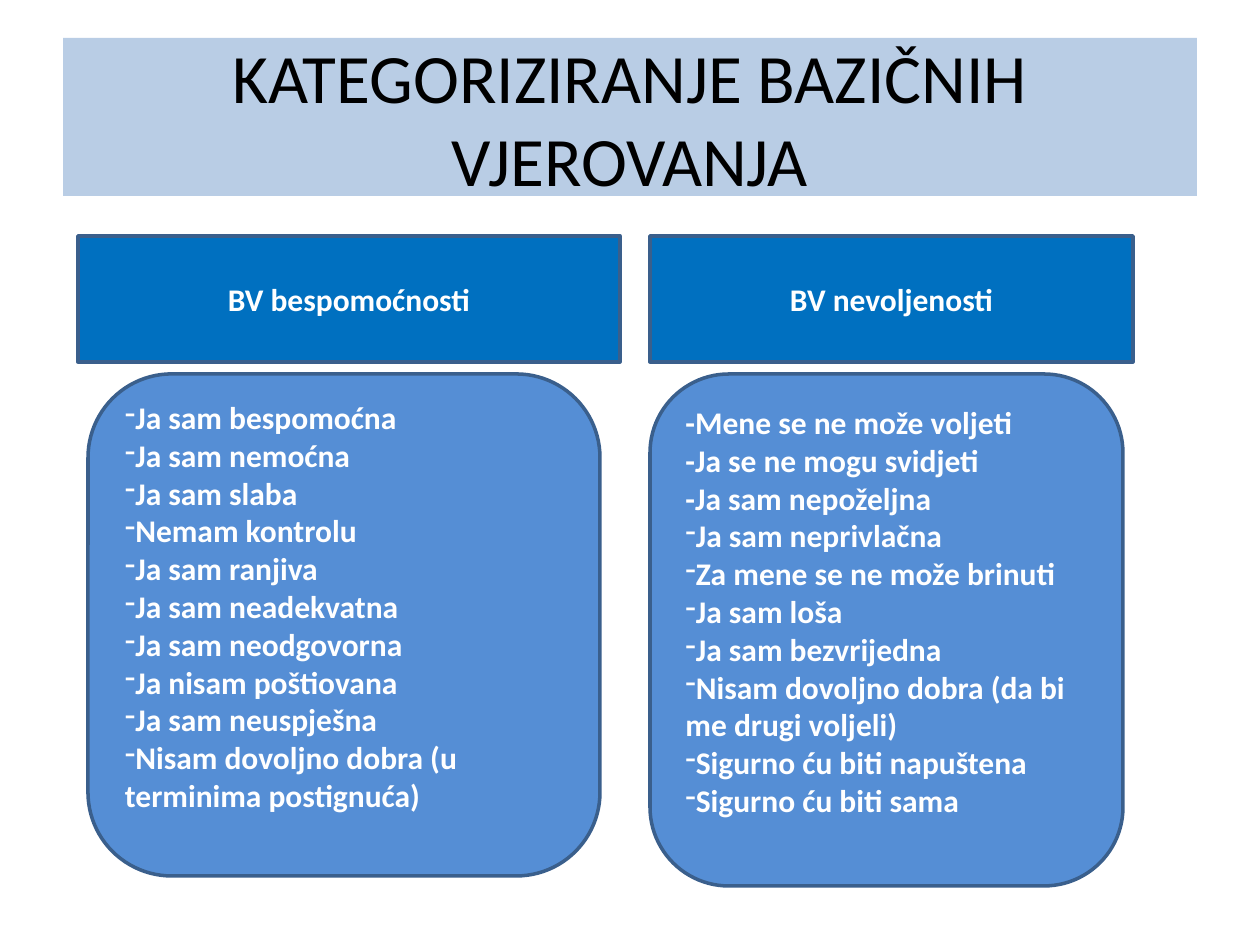
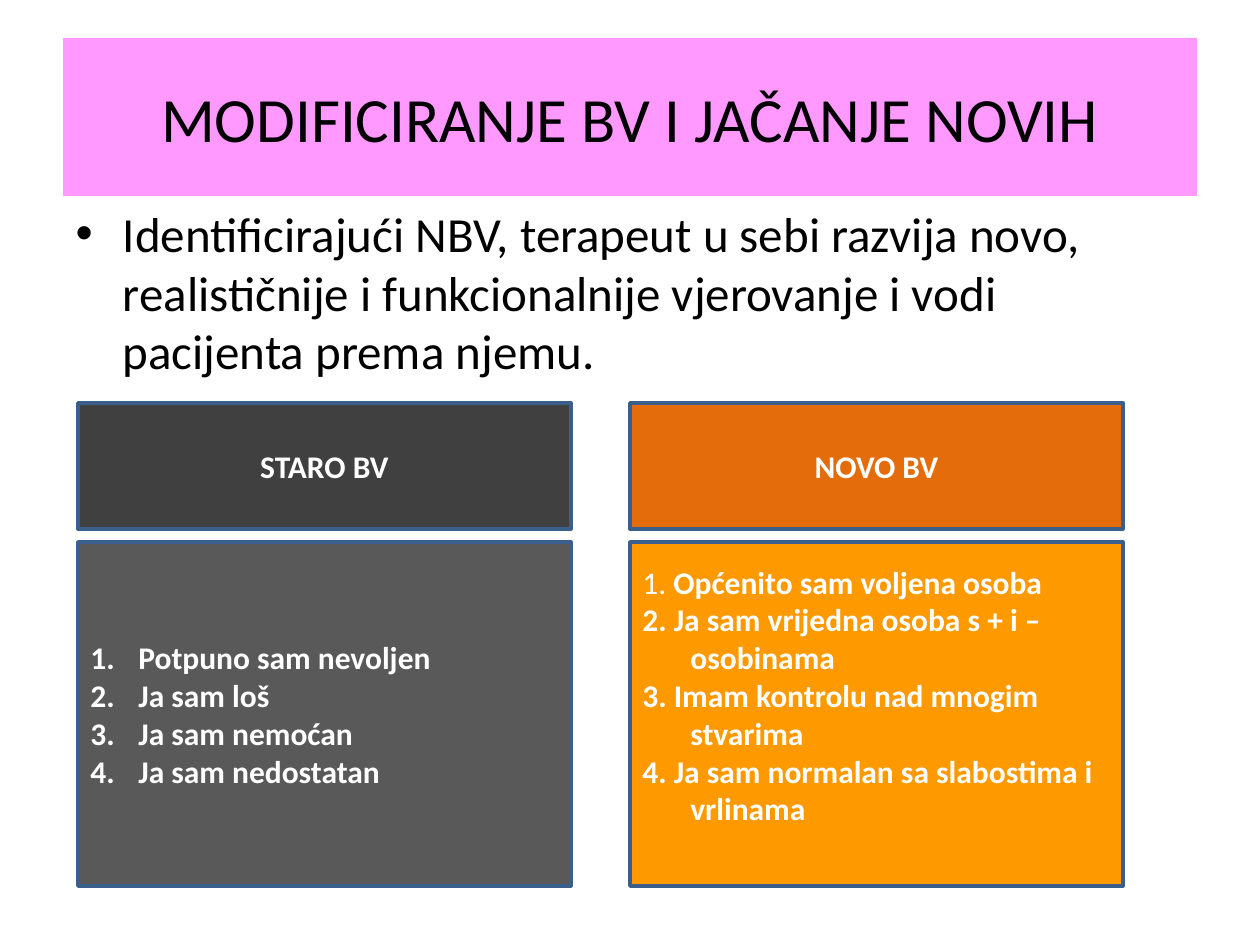
from dataclasses import dataclass
from typing import Any, NamedTuple, Optional

from lxml import etree
from pptx import Presentation
from pptx import util as u
from pptx.dml import color
from pptx.enum import shapes, text
from pptx.oxml import ns

PX_PER_INCH = 126
SLIDE_W, SLIDE_H = 1260, 945
HANGING = 48
EMPTY_LINE = 38
TITLE_ONLY, TITLE_AND_BODY = 5, 1


def px(length: int) -> u.Emu:
    return u.Emu(round(length * u.Inches(1) / PX_PER_INCH))


@dataclass(frozen=True)
class Theme:
    font: str = "Calibri"
    ink: str = "000000"
    light: str = "FFFFFF"
    outline: str = "3A5F8C"
    outline_pt: int = 2
    band_blue: str = "B9CDE5"
    band_pink: str = "FF99FF"
    heading_blue: str = "0070C0"
    card_blue: str = "558ED5"
    heading_old: str = "404040"
    card_old: str = "595959"
    heading_new: str = "E46C0A"
    card_new: str = "FF9900"
    long_title_pt: float = 39.6
    title_pt: int = 36
    body_pt: int = 28
    card_pt: int = 18


THEME = Theme()


class Box(NamedTuple):
    left: int
    top: int
    width: int
    height: int


class Belief(NamedTuple):
    """One list line; lead is typed before it in regular weight."""
    words: str
    mark: Optional[str] = None
    lead: str = ""


@dataclass(frozen=True)
class Panel:
    box: Box
    fill: str
    beliefs: tuple[Belief, ...]
    outline_shape: Any = shapes.MSO_SHAPE.RECTANGLE
    align: Any = text.PP_ALIGN.LEFT
    hanging: int = 0
    space_below: int = 0


TITLE_BOX = Box(63, 38, 1134, 158)
BODY_BOX = Box(63, 197, 1134, 699)


def apply(target: Any, values: dict[str, Any]) -> None:
    for attribute, value in values.items():
        setattr(target, attribute, value)


def place(target: Any, box: Box) -> None:
    apply(target, {side: px(length) for side, length in box._asdict().items()})


def paint(fill: Any, rgb: str) -> None:
    fill.solid()
    fill.fore_color.rgb = color.RGBColor.from_string(rgb)


def style(font: Any, size: float, rgb: str, bold: bool = False) -> None:
    apply(font, {"name": THEME.font, "size": u.Pt(size), "bold": bold})
    font.color.rgb = color.RGBColor.from_string(rgb)


def set_mark(paragraph: Any, mark: Optional[str], hanging: int) -> None:
    """Gives a paragraph its indent and a dash or automatic number."""
    properties = paragraph._p.get_or_add_pPr()
    if hanging:
        properties.set("marL", str(px(hanging)))
        properties.set("indent", str(-px(hanging)))
    if mark == "1.":
        etree.SubElement(properties, ns.qn("a:buAutoNum"), type="arabicPeriod")
    elif mark:
        etree.SubElement(properties, ns.qn("a:buFontTx"))
        etree.SubElement(properties, ns.qn("a:buChar"), char=mark)


def fill_placeholder(holder: Any, box: Box, words: str, size: float) -> None:
    place(holder, box)
    frame = holder.text_frame
    frame.text = words
    apply(frame, {"auto_size": text.MSO_AUTO_SIZE.NONE, "word_wrap": True})
    style(frame.paragraphs[0].runs[0].font, size, THEME.ink)


def add_title(slide: Any, words: str, band: str, size: float) -> None:
    fill_placeholder(slide.shapes.title, TITLE_BOX, words, size)
    paint(slide.shapes.title.fill, band)


def add_panel(slide: Any, panel: Panel) -> None:
    shape = slide.shapes.add_shape(panel.outline_shape, *map(px, panel.box))
    shape.shadow.inherit = False
    paint(shape.fill, panel.fill)
    paint(shape.line.fill, THEME.outline)
    shape.line.width = u.Pt(THEME.outline_pt)
    frame = shape.text_frame
    apply(frame, {
        "word_wrap": True,
        "vertical_anchor": text.MSO_ANCHOR.MIDDLE,
        "margin_bottom": frame.margin_bottom + px(panel.space_below),
    })
    for index, belief in enumerate(panel.beliefs):
        paragraph = frame.add_paragraph() if index else frame.paragraphs[0]
        paragraph.alignment = panel.align
        set_mark(paragraph, belief.mark, panel.hanging)
        for words, bold in ((belief.lead, False), (belief.words, True)):
            if words:
                run = paragraph.add_run()
                run.text = words
                style(run.font, THEME.card_pt, THEME.light, bold)


def heading(box: Box, fill: str, words: str) -> Panel:
    return Panel(box, fill, (Belief(words),), align=text.PP_ALIGN.CENTER)


def rounded_card(box: Box, beliefs: tuple[Belief, ...]) -> Panel:
    return Panel(box, THEME.card_blue, beliefs,
                 shapes.MSO_SHAPE.ROUNDED_RECTANGLE, space_below=EMPTY_LINE)


def marked(mark: str, *lines: str) -> tuple[Belief, ...]:
    return tuple(Belief(line, mark) for line in lines)


HELPLESS = marked(
    "-", "Ja sam bespomoćna", "Ja sam nemoćna", "Ja sam slaba",
    "Nemam kontrolu", "Ja sam ranjiva", "Ja sam neadekvatna",
    "Ja sam neodgovorna", "Ja nisam poštiovana", "Ja sam neuspješna",
    "Nisam dovoljno dobra (u terminima postignuća)",
)
UNLOVED = (
    Belief("-Mene se ne može voljeti"),
    Belief("-Ja se ne mogu svidjeti"),
    Belief("-Ja sam nepoželjna"),
    *marked(
        "-", "Ja sam neprivlačna", "Za mene se ne može brinuti",
        "Ja sam loša", "Ja sam bezvrijedna",
        "Nisam dovoljno dobra (da bi me drugi voljeli)",
        "Sigurno ću biti napuštena", "Sigurno ću biti sama",
    ),
)
OLD_BELIEFS = marked("1.", "Potpuno sam nevoljen", "Ja sam loš",
                     "Ja sam nemoćan", "Ja sam nedostatan")
NEW_BELIEFS = (
    Belief("Općenito sam voljena osoba", lead="1. "),
    Belief("2. Ja sam vrijedna osoba s + i – osobinama"),
    Belief("3. Imam kontrolu nad mnogim stvarima"),
    Belief("4. Ja sam normalan sa slabostima i vrlinama"),
)

CATEGORY_PANELS = (
    heading(Box(78, 236, 542, 126), THEME.heading_blue, "BV bespomoćnosti"),
    heading(Box(650, 236, 483, 126), THEME.heading_blue, "BV nevoljenosti"),
    rounded_card(Box(88, 374, 512, 502), HELPLESS),
    rounded_card(Box(650, 374, 473, 512), UNLOVED),
)


def change_panels() -> list[Panel]:
    """Old and new beliefs as two equal columns of heading and card."""
    columns = (
        (78, "STARO BV", THEME.heading_old, THEME.card_old, OLD_BELIEFS, 0),
        (630, "NOVO BV", THEME.heading_new, THEME.card_new, NEW_BELIEFS,
         EMPTY_LINE),
    )
    panels = []
    for left, label, heading_fill, card_fill, beliefs, space_below in columns:
        panels.append(heading(Box(left, 403, 493, 126), heading_fill, label))
        panels.append(Panel(Box(left, 542, 493, 344), card_fill, beliefs,
                            hanging=HANGING, space_below=space_below))
    return panels


def main() -> None:
    deck = Presentation()
    apply(deck, {"slide_width": px(SLIDE_W), "slide_height": px(SLIDE_H)})

    categories = deck.slides.add_slide(deck.slide_layouts[TITLE_ONLY])
    add_title(categories, "KATEGORIZIRANJE BAZIČNIH VJEROVANJA",
              THEME.band_blue, THEME.long_title_pt)
    for panel in CATEGORY_PANELS:
        add_panel(categories, panel)

    change = deck.slides.add_slide(deck.slide_layouts[TITLE_AND_BODY])
    add_title(change, "MODIFICIRANJE BV I JAČANJE NOVIH",
              THEME.band_pink, THEME.title_pt)
    fill_placeholder(
        change.placeholders[1], BODY_BOX,
        "Identificirajući NBV, terapeut u sebi razvija novo, realističnije i "
        "funkcionalnije vjerovanje i vodi pacijenta prema njemu.",
        THEME.body_pt)
    for panel in change_panels():
        add_panel(change, panel)

    deck.save("out.pptx")


if __name__ == "__main__":
    main()
